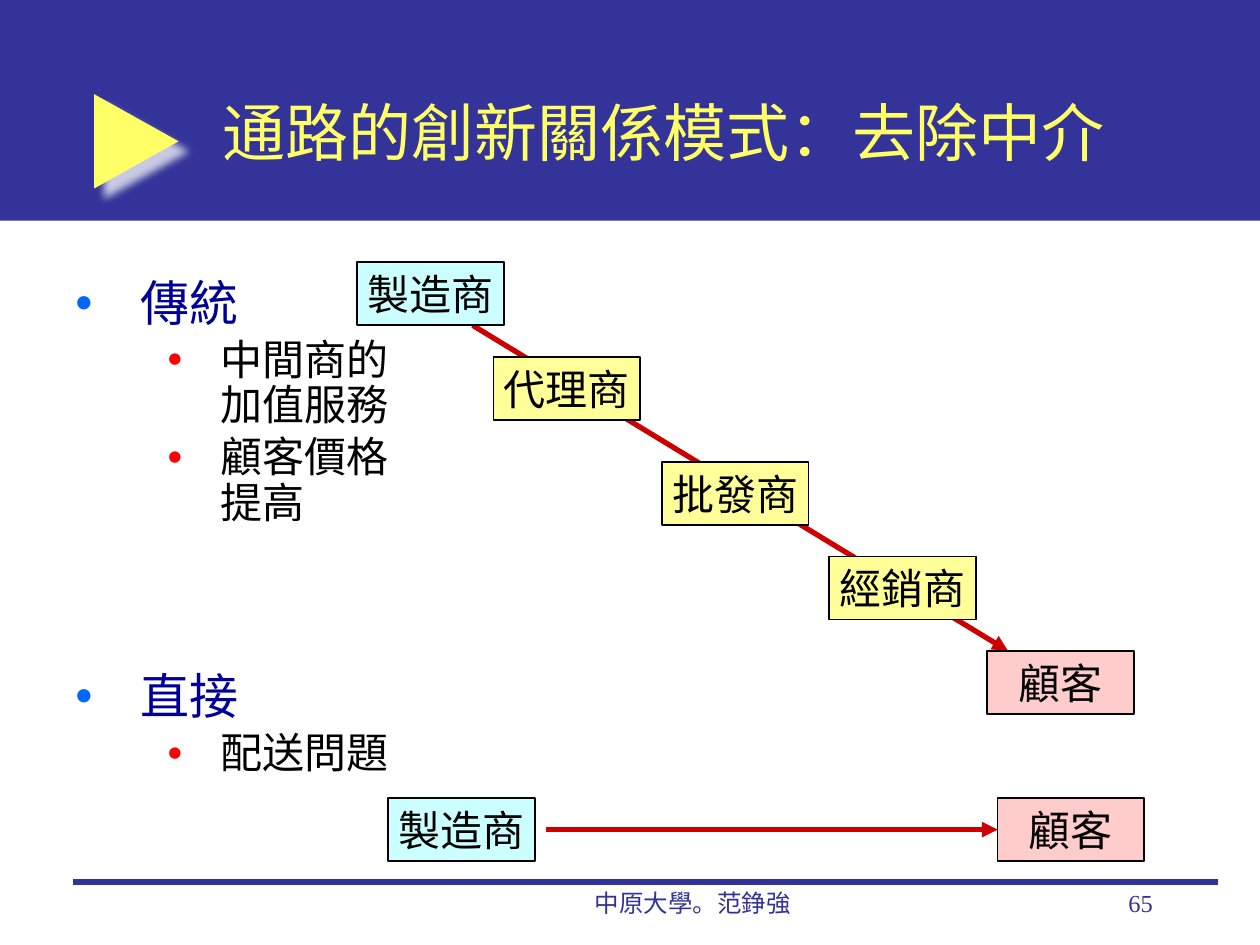
from dataclasses import dataclass

from lxml.etree import SubElement
from pptx import Presentation
from pptx.dml.color import RGBColor
from pptx.enum.shapes import MSO_CONNECTOR, MSO_SHAPE
from pptx.enum.text import MSO_ANCHOR, MSO_AUTO_SIZE, PP_ALIGN
from pptx.oxml.ns import qn
from pptx.util import Cm, Pt


@dataclass(frozen=True)
class Theme:
    navy: str = "333399"
    yellow: str = "FFFF66"
    white: str = "FFFFFF"
    black: str = "000000"
    arrow: str = "CC0000"
    heading: str = "000099"
    heading_bullet: str = "0066FF"
    point_bullet: str = "FF0000"
    maker: str = "CCFFFF"
    middleman: str = "FFFF99"
    customer: str = "FFCCCC"
    title_font: str = "Noto Sans CJK SC"
    heading_font: str = "Arial"
    text_font: str = "Times New Roman"
    title_size: int = 36
    heading_size: int = 28
    text_size: int = 24
    footer_size: int = 14


THEME = Theme()
BOX_W, BOX_H = 2.96, 1.27

CHAIN = [
    ("製造商", THEME.maker, 7.2, 5.29),
    ("代理商", THEME.middleman, 9.95, 7.2),
    ("批發商", THEME.middleman, 13.34, 9.31),
    ("經銷商", THEME.middleman, 16.72, 11.22),
    ("顧客", THEME.customer, 19.9, 13.12),
]

# Level, text, space before in points
OUTLINE = [
    (0, "傳統", 0),
    (1, "中間商的加值服務", 4),
    (1, "顧客價格提高", 4),
    (0, "直接", 83),
    (1, "配送問題", 4),
]


def rgb(value):
    return RGBColor.from_string(value)


def write(p, text, size=THEME.text_size, font=THEME.text_font,
          color=THEME.black, align=PP_ALIGN.LEFT):
    p.alignment = align
    r = p.add_run()
    r.text = text
    r.font.size = Pt(size)
    r.font.name = font
    r.font.color.rgb = rgb(color)


def add_bullet(p, color, left, hanging):
    """Give the paragraph a round bullet and a hanging indent, in cm."""
    pPr = p._p.get_or_add_pPr()
    pPr.set("marL", str(Cm(left)))
    pPr.set("indent", str(-Cm(hanging)))
    SubElement(SubElement(pPr, qn("a:buClr")), qn("a:srgbClr"), val=color)
    SubElement(pPr, qn("a:buFont"), typeface="Arial")
    SubElement(pPr, qn("a:buChar"), char="•")


def add_block(s, kind, left, top, width, height, fill):
    sp = s.shapes.add_shape(kind, Cm(left), Cm(top), Cm(width), Cm(height))
    sp.shadow.inherit = False
    sp.fill.solid()
    sp.fill.fore_color.rgb = rgb(fill)
    sp.line.fill.background()
    return sp


def add_party(s, text, fill, left, top):
    """Add the outlined box of one party in the channel."""
    sp = add_block(s, MSO_SHAPE.RECTANGLE, left, top, BOX_W, BOX_H, fill)
    sp.line.color.rgb = rgb(THEME.black)
    sp.line.width = Pt(1)
    tf = sp.text_frame
    tf.word_wrap = False
    tf.vertical_anchor = MSO_ANCHOR.MIDDLE
    write(tf.paragraphs[0], text, align=PP_ALIGN.CENTER)
    return sp


def add_line(s, x1, y1, x2, y2, color, arrow=False):
    line = s.shapes.add_connector(
        MSO_CONNECTOR.STRAIGHT, Cm(x1), Cm(y1), Cm(x2), Cm(y2))
    line.line.color.rgb = rgb(color)
    line.line.width = Pt(3)
    if arrow:
        SubElement(line.line._get_or_add_ln(), qn("a:tailEnd"), type="triangle")
    SubElement(line._element.spPr, qn("a:effectLst"))
    return line


def add_text_box(s, left, top, width, height):
    tf = s.shapes.add_textbox(
        Cm(left), Cm(top), Cm(width), Cm(height)).text_frame
    tf.word_wrap = True
    return tf


def add_title_marker(s):
    """Add the triangle beside the title, with its soft white shadow."""
    sp = add_block(s, MSO_SHAPE.RIGHT_ARROW, 1.9, 1.9, 1.7, 1.9, THEME.yellow)
    sp.adjustments[0] = 0.38
    sp.adjustments[1] = 1
    effects = sp._element.spPr.find(qn("a:effectLst"))
    shadow = SubElement(effects, qn("a:outerShdw"), blurRad=str(Pt(5)),
                        dist=str(Pt(8.5)), dir=str(45 * 60000),
                        algn="ctr", rotWithShape="0")
    color = SubElement(shadow, qn("a:srgbClr"), val=THEME.white)
    SubElement(color, qn("a:alpha"), val="75000")


def place_title(s, text):
    title = s.shapes.title
    title.left, title.top = Cm(4.23), Cm(1.06)
    title.width, title.height = Cm(19.26), Cm(3.18)
    s.shapes._spTree.append(title._element)  # in front of the band
    tf = title.text_frame
    tf.auto_size = MSO_AUTO_SIZE.NONE
    tf.vertical_anchor = MSO_ANCHOR.MIDDLE
    write(tf.paragraphs[0], text, size=THEME.title_size,
          font=THEME.title_font, color=THEME.yellow)


def add_outline(s):
    tf = add_text_box(s, 1.27, 5.5, 7.41, 11.22)
    for i, (level, text, before) in enumerate(OUTLINE):
        p = tf.add_paragraph() if i else tf.paragraphs[0]
        p.level = level
        p.line_spacing = 0.9
        p.space_before = Pt(before)
        if level == 0:
            add_bullet(p, THEME.heading_bullet, 1.32, 1.32)
            write(p, text, size=THEME.heading_size,
                  font=THEME.heading_font, color=THEME.heading)
        else:
            add_bullet(p, THEME.point_bullet, 2.92, 1.06)
            write(p, text)


def add_footer(s, text, left, width, align):
    tf = add_text_box(s, left, 17.78, width, 1.27)
    write(tf.paragraphs[0], text, size=THEME.footer_size,
          color=THEME.navy, align=align)


def main():
    prs = Presentation()
    prs.slide_width, prs.slide_height = Cm(25.4), Cm(19.05)
    s = prs.slides.add_slide(prs.slide_layouts[5])

    add_block(s, MSO_SHAPE.RECTANGLE, 0, 0, 25.4, 4.45, THEME.navy)
    add_title_marker(s)
    place_title(s, "通路的創新關係模式：去除中介")
    add_line(s, 1.48, 17.78, 24.55, 17.78, THEME.navy)
    add_footer(s, "中原大學。范錚強", 9.95, 8.04, PP_ALIGN.CENTER)
    add_footer(s, "65", 18.2, 5.29, PP_ALIGN.RIGHT)
    add_outline(s)

    add_line(s, 9.53, 6.56, 20.32, 13.12, THEME.arrow, arrow=True)
    for party in CHAIN:
        add_party(s, *party)

    direct_top = 16.09
    direct_mid = direct_top + BOX_H / 2
    add_party(s, "製造商", THEME.maker, 7.83, direct_top)
    customer = add_party(s, "顧客", THEME.customer, 20.11, direct_top)
    direct = add_line(s, 11, direct_mid, 20.11, direct_mid, THEME.arrow, arrow=True)
    direct.end_connect(customer, 1)

    prs.save("out.pptx")


if __name__ == "__main__":
    main()
